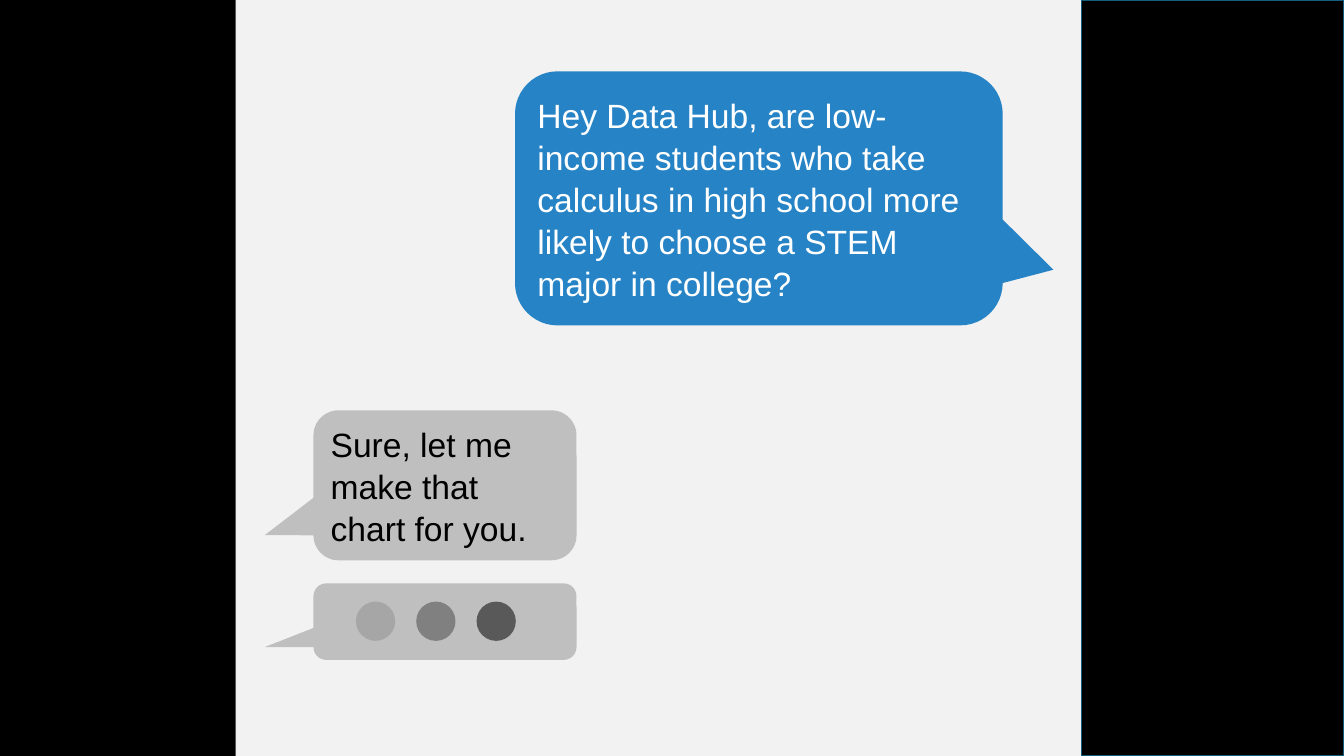
from pptx import Presentation
from pptx.dml.color import RGBColor
from pptx.enum.shapes import MSO_SHAPE
from pptx.enum.text import MSO_ANCHOR, PP_ALIGN
from pptx.util import Cm, Pt

THEME = {
    "screen": "F2F2F2", "side": "000000", "side_line": "115F7D",
    "question": "2683C6", "question_text": "FFFFFF",
    "reply": "BFBFBF", "reply_text": "000000",
    "dots": ["A6A6A6", "808080", "595959"],
    "font": "Arial", "size": Pt(24),
}
WIDTH, HEIGHT = 33.87, 19.05
SCREEN_LEFT, SCREEN_RIGHT = 5.94, 27.25


def add_box(kind, left, top, width, height, fill):
    box = slide.shapes.add_shape(kind, Cm(left), Cm(top), Cm(width), Cm(height))
    box.shadow.inherit = False
    box.fill.solid()
    box.fill.fore_color.rgb = RGBColor.from_string(fill)
    box.line.fill.background()
    return box


def add_bubble(place, tail, fill, text=None, color=None):
    bubble = add_box(MSO_SHAPE.ROUNDED_RECTANGULAR_CALLOUT, *place, fill)
    for index, value in enumerate((*tail, 0.167)):
        bubble.adjustments[index] = value
    if text:
        frame = bubble.text_frame
        frame.word_wrap = True
        frame.vertical_anchor = MSO_ANCHOR.MIDDLE
        para = frame.paragraphs[0]
        para_format = {"alignment": PP_ALIGN.LEFT, "line_spacing": 1.04, "space_after": Pt(8)}
        for name, value in para_format.items():
            setattr(para, name, value)
        span = para.add_run()
        span.text = text
        for name, value in {"name": THEME["font"], "size": THEME["size"]}.items():
            setattr(span.font, name, value)
        span.font.color.rgb = RGBColor.from_string(color)


# Deck and blank page
deck = Presentation()
deck.slide_width, deck.slide_height = Cm(WIDTH), Cm(HEIGHT)
slide = deck.slides.add_slide(deck.slide_layouts[6])

# Phone screen
add_box(MSO_SHAPE.RECTANGLE, SCREEN_LEFT, 0, SCREEN_RIGHT - SCREEN_LEFT, HEIGHT, THEME["screen"])

# Question and reply
add_bubble((12.98, 1.8, 12.29, 6.4), (0.604, 0.281), THEME["question"],
           "Hey Data Hub, are low-income students who take calculus "
           "in high school more likely to choose a STEM major in college?",
           THEME["question_text"])
reply_left, reply_width, reply_tail = 7.9, 6.63, (-0.685, 0.332)
add_bubble((reply_left, 10.34, reply_width, 3.78), reply_tail, THEME["reply"],
           "Sure, let me make that chart for you.", THEME["reply_text"])

# Black sides
add_box(MSO_SHAPE.RECTANGLE, 0, 0, SCREEN_LEFT, HEIGHT, THEME["side"])
right_side = add_box(MSO_SHAPE.RECTANGLE, SCREEN_RIGHT, 0, WIDTH - SCREEN_RIGHT, HEIGHT, THEME["side"])
right_side.line.color.rgb = RGBColor.from_string(THEME["side_line"])
right_side.line.width = Pt(1)

# Typing bubble with three dots
add_bubble((reply_left, 14.7, reply_width, 1.93), reply_tail, THEME["reply"])
dot_size, dot_step = 0.99, 1.52
for index, shade in enumerate(THEME["dots"]):
    add_box(MSO_SHAPE.OVAL, 8.97 + index * dot_step, 15.16, dot_size, dot_size, shade)

deck.save("out.pptx")
